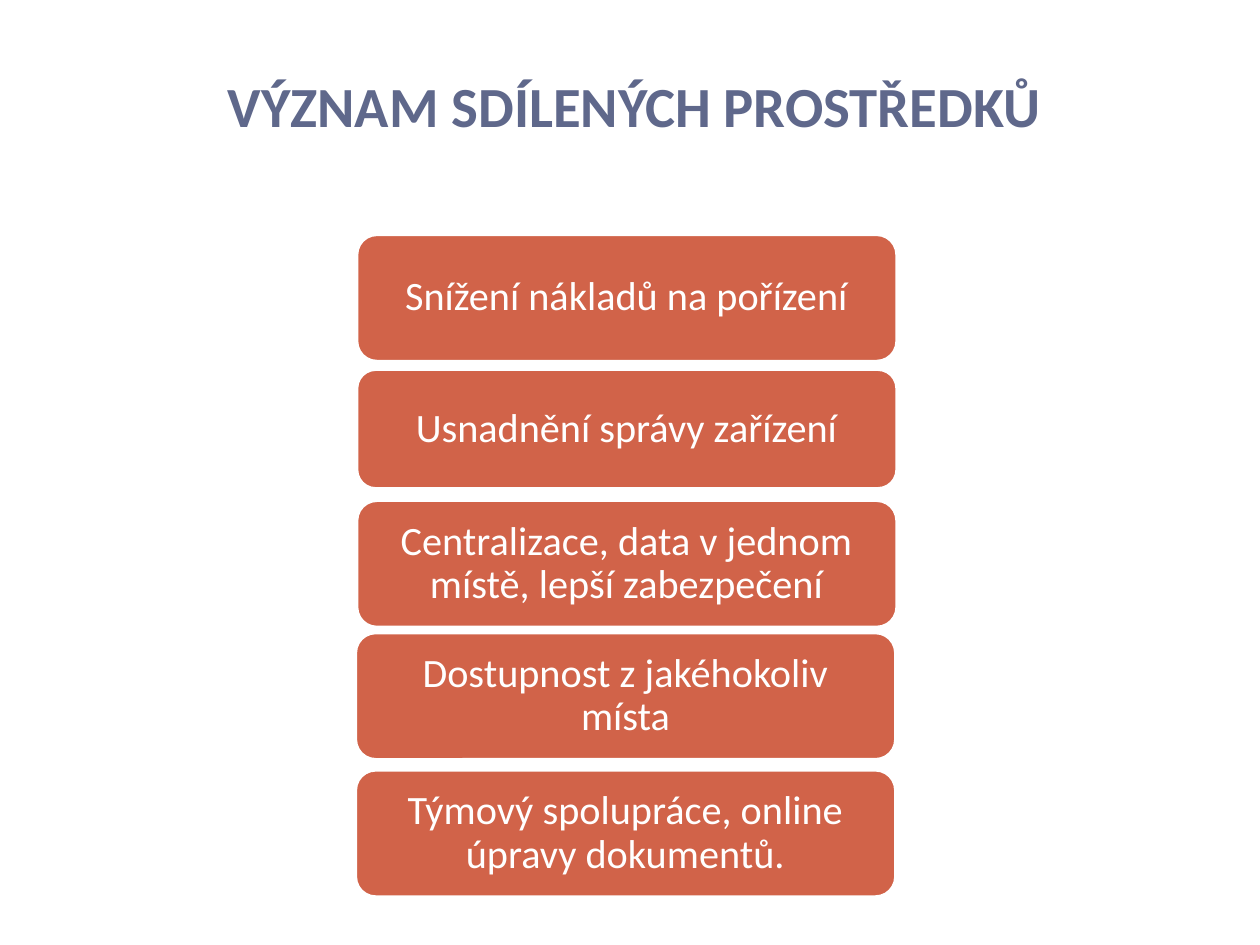
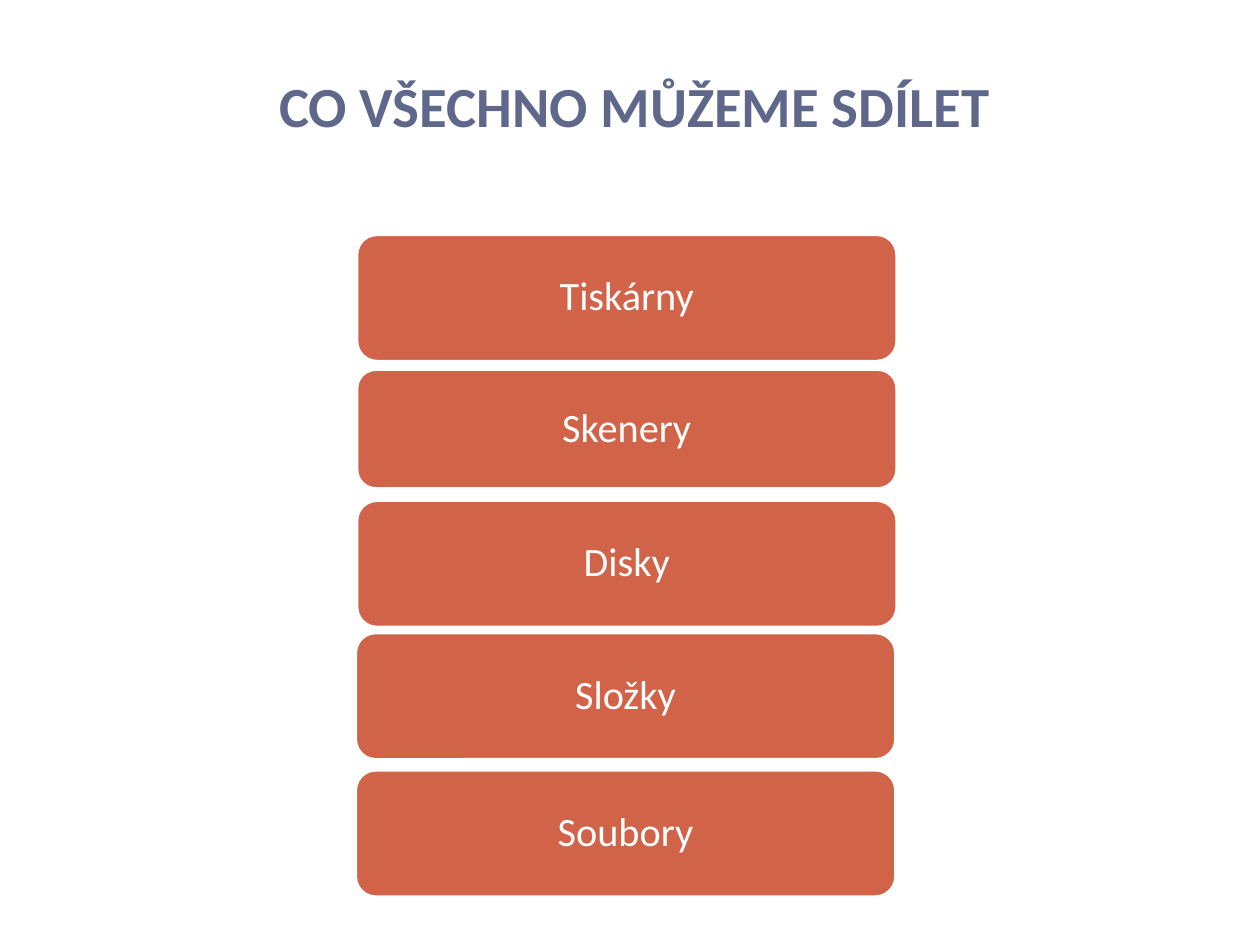
from pptx import Presentation
from pptx.dml.color import RGBColor
from pptx.enum.shapes import MSO_SHAPE as SHAPE
from pptx.enum.text import MSO_ANCHOR as ANCHOR, PP_ALIGN as ALIGN
from pptx.util import Inches, Pt

FONT = "Calibri"
WHITE, SLATE, BRICK = "FFFFFF", "5F688B", "D16349"
TITLE_FORMAT = {"name": FONT, "size": Pt(32.4), "bold": True}
CARD_FORMAT = {"name": FONT, "size": Pt(23), "bold": False}
CARD_WIDTH = 4.29
CARD_SLOTS = [
    (2.83, 1.86, 1.01),
    (2.83, 2.93, 0.95),
    (2.83, 3.97, 1.01),
    (2.82, 5.02, 1.01),
    (2.82, 6.11, 1.01),
]
SLIDES = {
    "VÝZNAM SDÍLENÝCH PROSTŘEDKŮ": [
        "Snížení nákladů na pořízení",
        "Usnadnění správy zařízení",
        "Centralizace, data v jednom místě, lepší zabezpečení",
        "Dostupnost z jakéhokoliv místa",
        "Týmový spolupráce, online úpravy dokumentů.",
    ],
    "CO VŠECHNO MŮŽEME SDÍLET": [
        "Tiskárny", "Skenery", "Disky", "Složky", "Soubory",
    ],
}


def rgb(value):
    return RGBColor.from_string(value)


def write_text(sp, text, color, font_format, frame_format, spacing=1.0):
    tf = sp.text_frame
    tf.word_wrap = True
    for key, value in frame_format.items():
        setattr(tf, key, value)
    p = tf.paragraphs[0]
    p.alignment = ALIGN.CENTER
    p.line_spacing = spacing
    r = p.add_run()
    r.text = text
    for key, value in font_format.items():
        setattr(r.font, key, value)
    r.font.color.rgb = rgb(color)


def add_title(slide, text):
    sp = slide.shapes.add_textbox(Inches(0.43), Inches(0.44), Inches(9.21), Inches(0.68))
    frame = {"vertical_anchor": ANCHOR.BOTTOM, "margin_bottom": Inches(0.02)}
    write_text(sp, text, SLATE, TITLE_FORMAT, frame)


def add_card(slide, text, left, top, height):
    sp = slide.shapes.add_shape(
        SHAPE.ROUNDED_RECTANGLE,
        Inches(left), Inches(top), Inches(CARD_WIDTH), Inches(height))
    sp.adjustments[0] = 0.16
    sp.shadow.inherit = False
    sp.fill.solid()
    sp.fill.fore_color.rgb = rgb(BRICK)
    sp.line.color.rgb = rgb(WHITE)
    sp.line.width = Pt(2)
    frame = {
        "vertical_anchor": ANCHOR.MIDDLE,
        "margin_left": Inches(0.1), "margin_right": Inches(0.1),
        "margin_top": Inches(0.05), "margin_bottom": Inches(0.05),
    }
    write_text(sp, text, WHITE, CARD_FORMAT, frame, 0.9)


def add_card_slide(prs, title, cards):
    slide = prs.slides.add_slide(prs.slide_layouts[6])
    slide.background.fill.solid()
    slide.background.fill.fore_color.rgb = rgb(WHITE)
    add_title(slide, title)
    for text, slot in zip(cards, CARD_SLOTS):
        add_card(slide, text, *slot)


def main():
    prs = Presentation()
    prs.slide_width, prs.slide_height = Inches(10), Inches(7.5)
    for title, cards in SLIDES.items():
        add_card_slide(prs, title, cards)
    prs.save("out.pptx")


if __name__ == "__main__":
    main()
